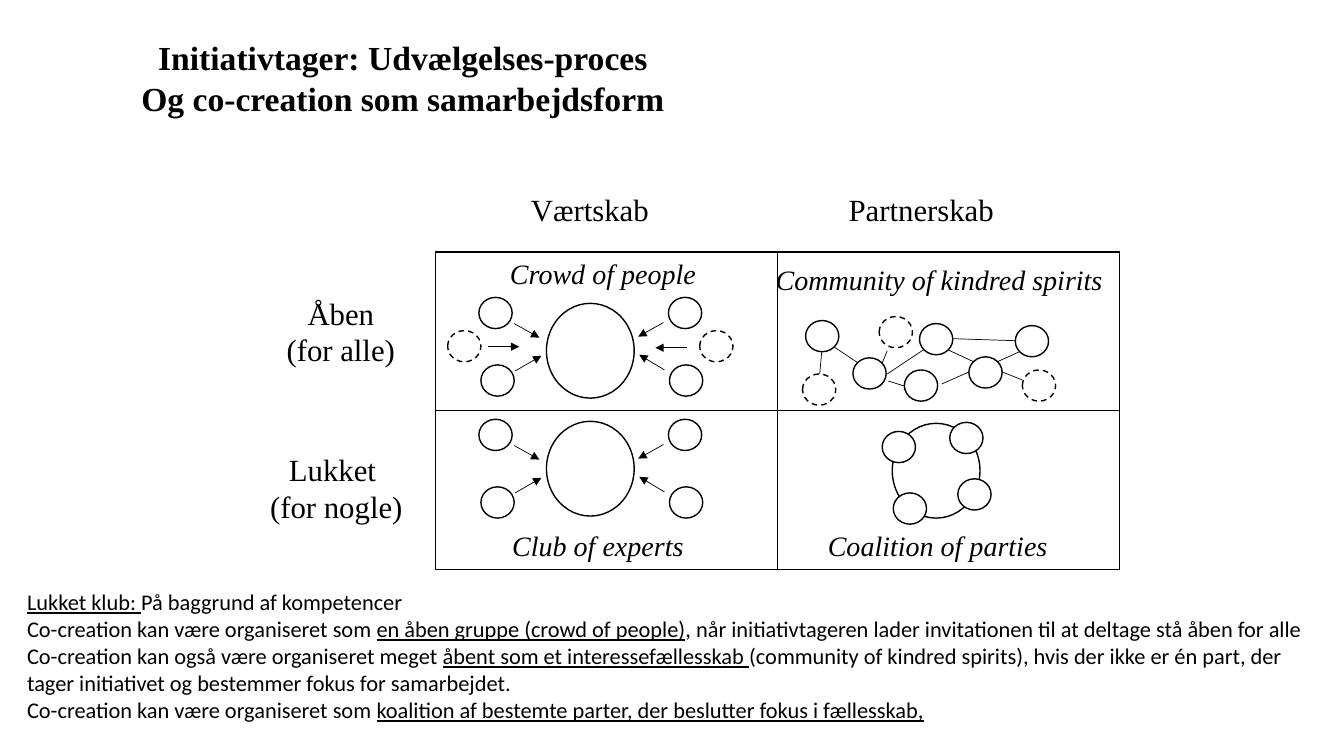
import pptx
import pptx.dml.color
import pptx.enum.dml
import pptx.enum.shapes
import pptx.enum.text
import pptx.oxml
import pptx.util
from pptx.oxml.ns import nsdecls, qn
from pptx.util import Inches

BLACK, WHITE = "000000", "FFFFFF"
SERIF, SANS = "Times New Roman", "Calibri"
NODE = (0.33, 0.31)
CORE = (0.87, 0.94)


def color(hex_value):
    return pptx.dml.color.RGBColor.from_string(hex_value)


def add_text(slide, box, paragraphs, centered=True, **font_format):
    """Each paragraph is a list of runs; a run is (words, underlined)."""
    frame = slide.shapes.add_textbox(*map(Inches, box)).text_frame
    frame.word_wrap = True
    for index, runs in enumerate(paragraphs):
        paragraph = frame.paragraphs[0] if index == 0 else frame.add_paragraph()
        if centered:
            paragraph.alignment = pptx.enum.text.PP_ALIGN.CENTER
        for words, underlined in runs:
            run = paragraph.add_run()
            run.text = words
            run.font.color.rgb = color(BLACK)
            for name, value in font_format.items():
                setattr(run.font, name, value)
            if underlined:
                run.font.underline = True


def add_label(slide, box, lines, size, **font_format):
    add_text(slide, box, [[(line, False)] for line in lines],
             size=pptx.util.Pt(size), name=SERIF, **font_format)


def add_circle(slide, left, top, size=NODE, fill=None, dashed=False):
    circle = slide.shapes.add_shape(
        pptx.enum.shapes.MSO_SHAPE.OVAL, *map(Inches, (left, top, *size)))
    circle.shadow.inherit = False
    if fill:
        circle.fill.solid()
        circle.fill.fore_color.rgb = color(fill)
    else:
        circle.fill.background()
    circle.line.color.rgb = color(BLACK)
    circle.line.width = pptx.util.Pt(1)
    if dashed:
        circle.line.dash_style = pptx.enum.dml.MSO_LINE.DASH


def add_link(slide, start, end, arrow=False):
    link = slide.shapes.add_connector(
        pptx.enum.shapes.MSO_CONNECTOR.STRAIGHT, *map(Inches, (*start, *end)))
    link.line.color.rgb = color(BLACK)
    link.line.width = pptx.util.Pt(0.5)
    if arrow:
        link.line._get_or_add_ln().append(
            pptx.oxml.parse_xml(f'<a:tailEnd {nsdecls("a")} type="triangle"/>'))
    link._element.spPr.append(
        pptx.oxml.parse_xml(f'<a:effectLst {nsdecls("a")}/>'))


def add_matrix(slide, left, top, width, height):
    table = slide.shapes.add_table(
        2, 2, *map(Inches, (left, top, width, height))).table
    table.first_row = table.horz_banding = False
    for cell in table.iter_cells():
        cell.fill.background()
        properties = cell._tc.get_or_add_tcPr()
        for index, side in enumerate(("lnL", "lnR", "lnT", "lnB")):
            properties.insert(index, pptx.oxml.parse_xml(
                f'<a:{side} {nsdecls("a")} w="12700"><a:solidFill>'
                f'<a:srgbClr val="{BLACK}"/></a:solidFill></a:{side}>'))


def add_hub(slide, left, top, core_top, with_outsiders):
    """A large circle approached by four nodes, plus two dashed ones when open."""
    add_circle(slide, left + 0.67, core_top, CORE)
    for x, y in ((0, 0), (0.02, 0.67), (1.88, 0), (1.89, 0.67)):
        add_circle(slide, left + x, top + y)
    arrows = [((0.35, 0.26), (0.6, 0.4)), ((0.36, 0.73), (0.62, 0.58)),
              ((1.83, 0.25), (1.58, 0.39)), ((1.84, 0.72), (1.59, 0.57))]
    if with_outsiders:
        for x in (-0.31, 2.19):
            add_circle(slide, left + x, top + 0.33, dashed=True)
        arrows += [((0.09, 0.49), (0.4, 0.49)), ((2.06, 0.5), (1.75, 0.5))]
    for (x1, y1), (x2, y2) in arrows:
        add_link(slide, (left + x1, top + y1), (left + x2, top + y2), arrow=True)


def add_coalition(slide, left, top):
    add_circle(slide, left + 0.1, top, CORE)
    for x, y in ((0, 0.08), (0.11, 0.69), (0.75, 0.55), (0.67, -0.01)):
        add_circle(slide, left + x, top + y, fill=WHITE)


def add_community(slide, left, top):
    members = ((0.03, 0.04), (0.5, 0.41), (1.01, 0.53),
               (1.16, 0.07), (1.65, 0.4), (2.11, 0.09))
    for x, y in members:
        add_circle(slide, left + x, top + y, fill=WHITE)
    for x, y in ((0, 0.57), (0.76, 0), (2.18, 0.53)):
        add_circle(slide, left + x, top + y, dashed=True)
    ties = (((0.19, 0.35), (0.17, 0.57)), ((0.31, 0.3), (0.55, 0.46)),
            ((0.79, 0.46), (0.84, 0.34)), ((0.85, 0.64), (1.01, 0.69)),
            ((1.2, 0.33), (0.84, 0.57)), ((1.44, 0.33), (1.7, 0.45)),
            ((1.38, 0.67), (1.65, 0.55)), ((1.98, 0.55), (2.18, 0.63)),
            ((1.93, 0.45), (2.15, 0.35)), ((1.49, 0.22), (2.11, 0.24)))
    for (x1, y1), (x2, y2) in ties:
        add_link(slide, (left + x1, top + y1), (left + x2, top + y2))


def add_headings(slide):
    add_label(slide, (0.04, 0.32, 7.91, 1.31),
              ["Initiativtager: Udvælgelses-proces",
               "Og co-creation som samarbejdsform"], 24, bold=True)
    for box, lines in (
            ((2.59, 2.87, 1.58, 0.84), ["Åben", "(for alle)"]),
            ((2.49, 4.42, 1.69, 0.84), ["Lukket ", "(for nogle)"]),
            ((5.06, 1.84, 1.58, 0.47), ["Værtskab"]),
            ((8.23, 1.84, 1.89, 0.47), ["Partnerskab "])):
        add_label(slide, box, lines, 22)


def add_cell_names(slide):
    for box, name in (
            ((4.72, 2.5, 2.52, 0.44), "Crowd of people"),
            ((4.67, 5.19, 2.52, 0.44), "Club of experts"),
            ((7.52, 2.56, 3.59, 0.44), "Community of kindred spirits"),
            ((8.04, 5.19, 2.52, 0.44), "Coalition of parties")):
        add_label(slide, box, [name], 20, italic=True)


def add_explanation(slide, box):
    add_text(slide, box, [
        [("Lukket klub: ", True), ("På baggrund af kompetencer", False)],
        [("Co-creation kan være organiseret som ", False),
         ("en åben gruppe (crowd of people)", True),
         (", når initiativtageren lader invitationen til at deltage "
          "stå åben for alle", False)],
        [("Co-creation kan også være organiseret meget ", False),
         ("åbent som et interessefællesskab ", True),
         ("(community of kindred spirits), hvis der ikke er én part, der "
          "tager initiativet og bestemmer fokus for samarbejdet.", False)],
        [("Co-creation kan være organiseret som ", False),
         ("koalition af bestemte parter, der beslutter fokus i fællesskab,", True)],
    ], centered=False, size=pptx.util.Pt(16), name=SANS)


def main():
    deck = pptx.Presentation()
    deck.slide_width, deck.slide_height = Inches(13.33), Inches(7.5)
    slide = deck.slides.add_slide(deck.slide_layouts[6])
    add_headings(slide)
    add_matrix(slide, 4.32, 2.5, 6.78, 3.15)
    add_cell_names(slide)
    add_hub(slide, 4.75, 2.95, core_top=3.01, with_outsiders=True)
    add_hub(slide, 4.75, 4.16, core_top=4.18, with_outsiders=False)
    add_coalition(slide, 8.75, 4.2)
    add_community(slide, 7.96, 3.14)
    add_explanation(slide, (0.17, 5.79, 13.02, 1.45))
    deck.save("out.pptx")


if __name__ == "__main__":
    main()
